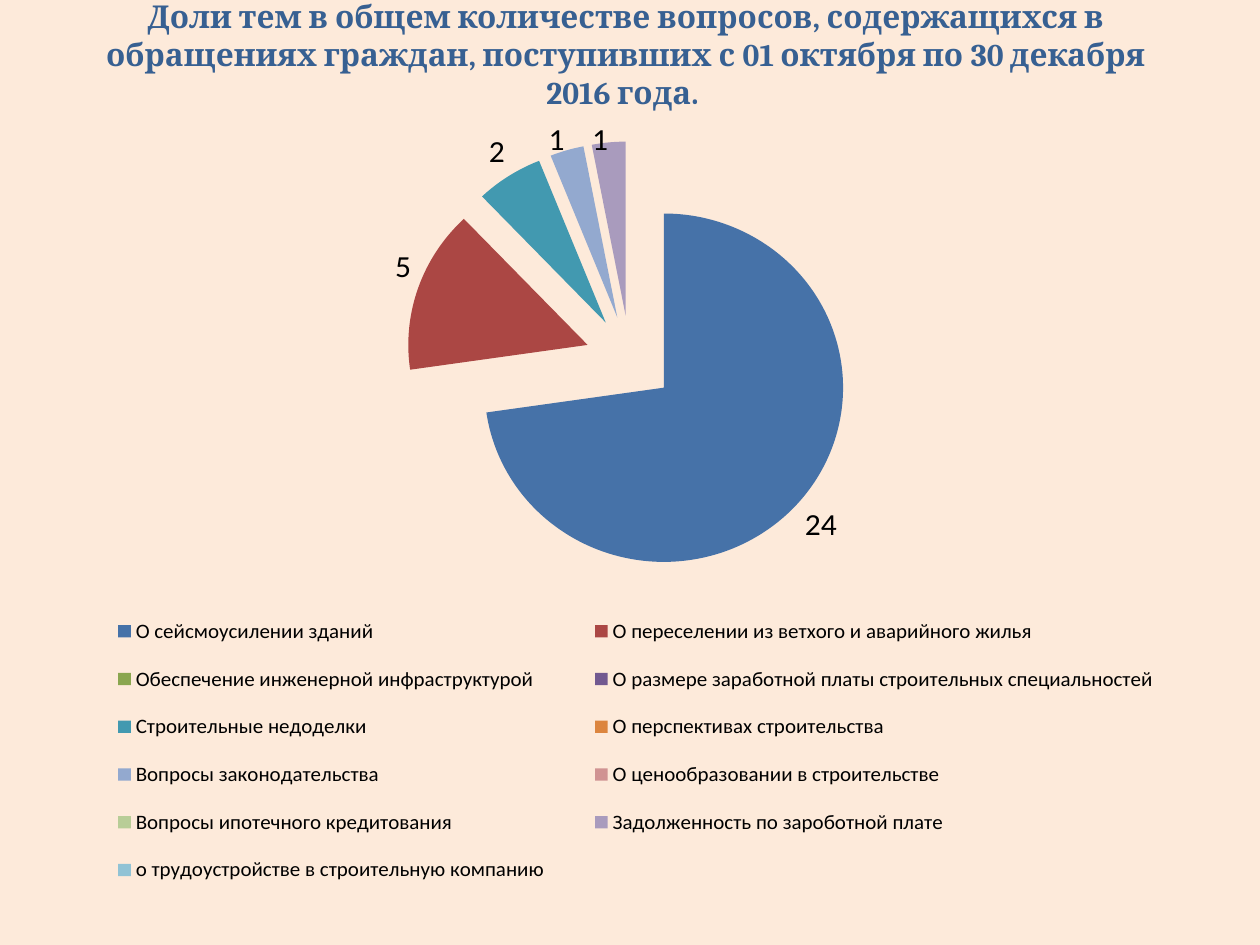
from lxml import etree
from pptx import Presentation
from pptx.chart.data import CategoryChartData
from pptx.dml.color import RGBColor
from pptx.enum.chart import XL_CHART_TYPE as ChartType
from pptx.enum.chart import XL_LABEL_POSITION as LabelPos
from pptx.enum.chart import XL_LEGEND_POSITION as LegendPos
from pptx.enum.text import MSO_ANCHOR as Anchor
from pptx.enum.text import PP_ALIGN as Align
from pptx.oxml import parse_xml
from pptx.oxml.ns import nsdecls, qn
from pptx.util import Cm, Pt

TITLE = ("Доли тем в общем количестве вопросов, содержащихся в обращениях "
         "граждан, поступивших с 01 октября по 30 декабря 2016 года. ")

# Topic, number of questions, slice colour
TOPICS = [
    ("О сейсмоусилении зданий", 24, "4672A8"),
    ("О переселении из ветхого и аварийного жилья", 5, "AB4744"),
    ("Обеспечение инженерной инфраструктурой", 0, "8AA64F"),
    ("О размере заработной платы строительных специальностей", 0, "725990"),
    ("Строительные недоделки", 2, "4299B0"),
    ("О перспективах строительства", 0, "DC853E"),
    ("Вопросы законодательства", 1, "93A9CF"),
    ("О ценообразовании в строительстве", 0, "D09392"),
    ("Вопросы ипотечного кредитования", 0, "B8CD97"),
    ("Задолженность по зароботной плате", 1, "A99BBD"),
    ("о трудоустройстве в строительную компанию", 0, "91C3D5"),
]


def color(value):
    return RGBColor.from_string(value)


def set_font(font, size, name="Calibri", fill="000000", bold=False):
    font.size, font.name, font.bold = Pt(size), name, bold
    font.color.rgb = color(fill)


def write_text(tf, text, align=Align.LEFT, anchor=Anchor.TOP, **font):
    tf.word_wrap = True
    tf.vertical_anchor = anchor
    p = tf.paragraphs[0]
    p.alignment = align
    r = p.add_run()
    r.text = text
    set_font(r.font, **font)


def add_title(s, left, top, width, height):
    sp = s.shapes.title
    sp.left, sp.top, sp.width, sp.height = left, top, width, height
    write_text(sp.text_frame, TITLE, align=Align.CENTER, anchor=Anchor.MIDDLE,
               size=18, name="Cambria", fill="376092", bold=True)


def set_layout(parent, index, target="", **box):
    """Place a chart part by a box given in percent of the chart."""
    for old in parent.findall(qn("c:layout")):
        parent.remove(old)
    sizes = "".join(f'<c:{key} val="{val / 100}"/>' for key, val in box.items())
    parent.insert(index, parse_xml(
        f'<c:layout {nsdecls("c")}><c:manualLayout>{target}'
        f'<c:xMode val="edge"/><c:yMode val="edge"/>{sizes}'
        '</c:manualLayout></c:layout>'))


def explode(series, percent):
    explosion = etree.Element(qn("c:explosion"), val=str(percent))
    series._element.find(qn("c:dPt")).addprevious(explosion)


def add_topic_pie(s, left, top, width, height):
    names, counts, fills = zip(*TOPICS)
    data = CategoryChartData()
    data.categories = names
    data.add_series("Series 1", counts)
    chart = s.shapes.add_chart(ChartType.PIE, left, top, width, height, data).chart
    chart.has_title = False
    set_font(chart.font, 18)

    # Slices
    plot = chart.plots[0]
    plot.vary_by_categories = True
    series = plot.series[0]
    for i, fill in enumerate(fills):
        point = series.points[i].format
        point.fill.solid()
        point.fill.fore_color.rgb = color(fill)
    explode(series, 25)
    set_layout(plot._element.getparent(), 0, '<c:layoutTarget val="inner"/>',
               x=0, y=2.6, w=100, h=55.5)

    # Labels; the number format hides zeros
    labels = series.data_labels
    labels.show_value = True
    labels.position = LabelPos.OUTSIDE_END
    labels.number_format = "0;;;"
    labels.number_format_is_linked = False
    set_font(labels.font, 18)

    # Legend in two columns
    chart.has_legend = True
    legend = chart.legend
    legend.position = LegendPos.BOTTOM
    legend.include_in_layout = False
    set_font(legend.font, 12)
    set_layout(legend._element, 1, x=1, y=60.5, w=99, h=39.5)


def main():
    prs = Presentation()
    prs.slide_width, prs.slide_height = Cm(25.4), Cm(19.05)
    s = prs.slides.add_slide(prs.slide_layouts[5])
    s.background.fill.solid()
    s.background.fill.fore_color.rgb = color("FDEADA")
    add_topic_pie(s, Cm(1.27), Cm(1.98), Cm(22.86), Cm(16.28))
    add_title(s, Cm(1.19), Cm(0), Cm(22.86), Cm(2.18))
    prs.save("out.pptx")


if __name__ == "__main__":
    main()
